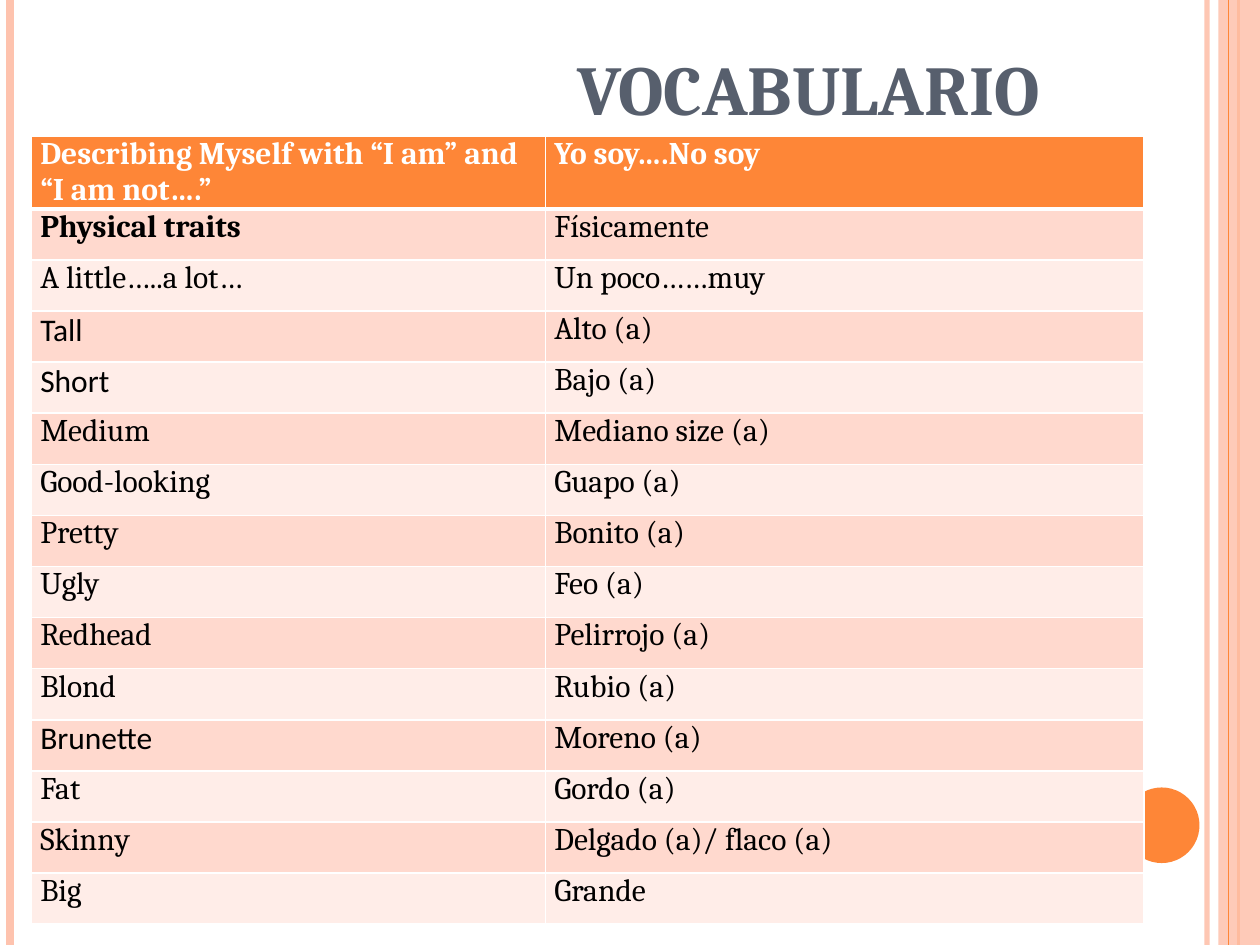
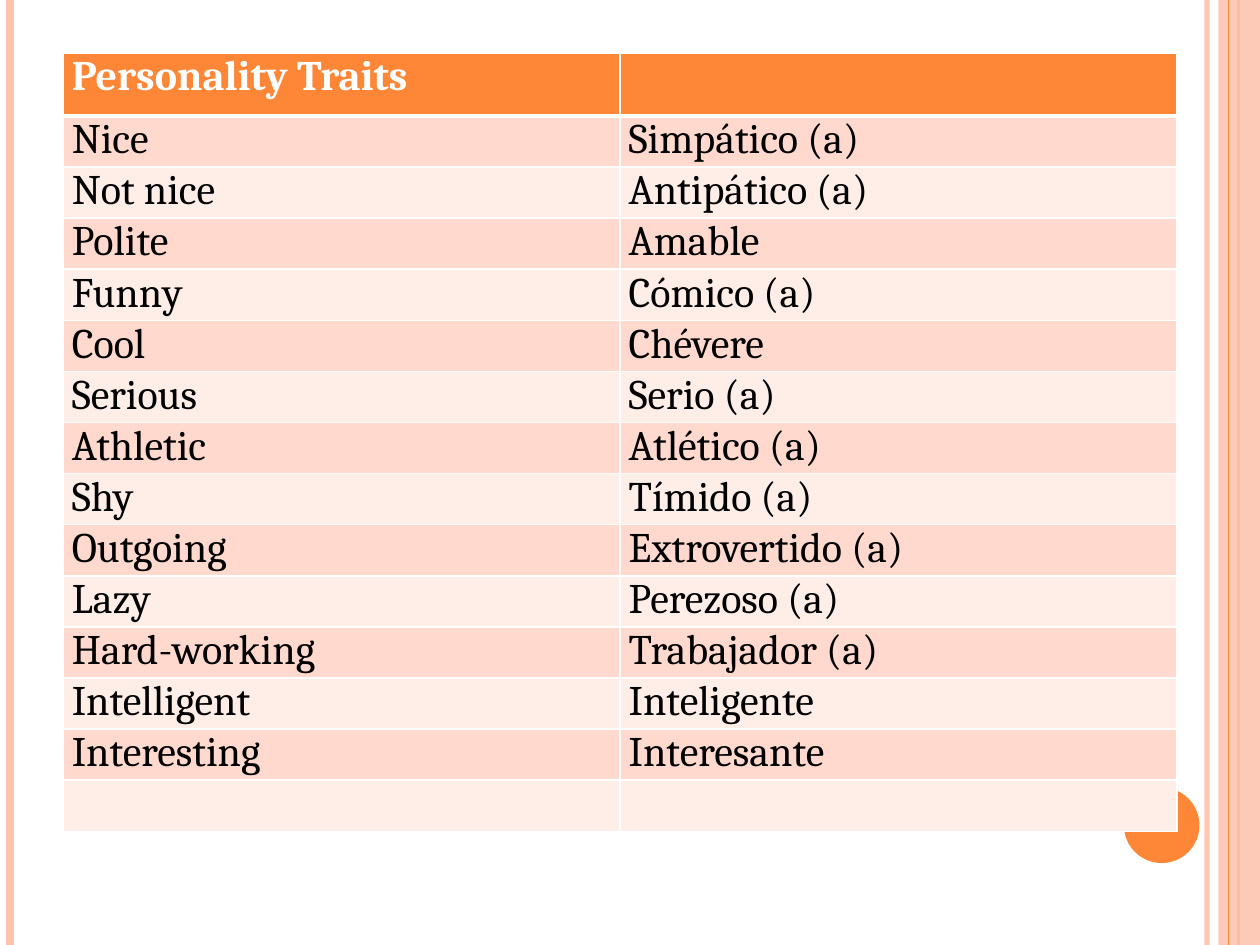
from lxml import etree
from pptx import Presentation
from pptx.dml.color import RGBColor
from pptx.enum.shapes import MSO_CONNECTOR, MSO_SHAPE
from pptx.enum.text import MSO_ANCHOR, PP_ALIGN
from pptx.oxml.ns import qn
from pptx.util import Inches, Pt

STRAIGHT = MSO_CONNECTOR.STRAIGHT
RECTANGLE, OVAL = MSO_SHAPE.RECTANGLE, MSO_SHAPE.OVAL
CENTER, LEFT = PP_ALIGN.CENTER, PP_ALIGN.LEFT
TOP, BOTTOM = MSO_ANCHOR.TOP, MSO_ANCHOR.BOTTOM

COLORS = {
    "orange": "FE8637", "peach": "FEC3AE", "slate": "575F6D",
    "band_dark": "FFD9CE", "band_light": "FFEDE8",
    "white": "FFFFFF", "black": "000000",
}
SERIF, SANS = "Cambria", "Calibri"
SLIDE_WIDTH, SLIDE_HEIGHT = 10, 7.5
BODY_HEIGHT = 5.68

TITLE = "VOCABULARIO"
PHYSICAL_TRAITS = [
    ("Describing Myself with “I am” and “I am not….”", "Yo soy….No soy"),
    ("Physical traits", "Físicamente"),
    ("A little…..a lot…", "Un poco……muy"),
    ("Tall", "Alto (a)"),
    ("Short", "Bajo (a)"),
    ("Medium", "Mediano size (a)"),
    ("Good-looking", "Guapo (a)"),
    ("Pretty", "Bonito (a)"),
    ("Ugly", "Feo (a)"),
    ("Redhead", "Pelirrojo (a)"),
    ("Blond", "Rubio (a)"),
    ("Brunette", "Moreno (a)"),
    ("Fat", "Gordo (a)"),
    ("Skinny", "Delgado (a)/ flaco (a)"),
    ("Big", "Grande"),
]
PERSONALITY_TRAITS = [
    ("Personality Traits", ""),
    ("Nice", "Simpático (a)"),
    ("Not nice", "Antipático (a)"),
    ("Polite", "Amable"),
    ("Funny", "Cómico (a)"),
    ("Cool", "Chévere"),
    ("Serious", "Serio (a)"),
    ("Athletic", "Atlético (a)"),
    ("Shy", "Tímido (a)"),
    ("Outgoing", "Extrovertido (a)"),
    ("Lazy", "Perezoso (a)"),
    ("Hard-working", "Trabajador (a)"),
    ("Intelligent", "Inteligente"),
    ("Interesting", "Interesante"),
    ("", ""),
]
SANS_WORDS = {"Tall", "Short", "Brunette"}
BOLD_WORDS = {"Physical traits"}


def rgb(name):
    return RGBColor.from_string(COLORS[name])


def write_text(frame, text, size=18, font=SERIF, color="black", bold=False, align=LEFT):
    paragraph = frame.paragraphs[0]
    paragraph.alignment = align
    run = paragraph.add_run()
    run.text = text
    run.font.name = font
    run.font.size = Pt(size)
    run.font.bold = bold
    run.font.color.rgb = rgb(color)
    return run


def set_opacity(shape, percent):
    color = next(shape.element.iter(qn("a:srgbClr")))
    etree.SubElement(color, qn("a:alpha"), val=str(percent * 1000))


def add_stripe(slide, x, color, width, opacity=100):
    stripe = slide.shapes.add_connector(
        STRAIGHT, Inches(x), 0, Inches(x), Inches(SLIDE_HEIGHT))
    stripe.line.color.rgb = rgb(color)
    stripe.line.width = Pt(width)
    etree.SubElement(stripe.element.spPr, qn("a:effectLst"))
    if opacity < 100:
        set_opacity(stripe, opacity)


def add_block(slide, kind, left, top, width, height, color):
    block = slide.shapes.add_shape(
        kind, Inches(left), Inches(top), Inches(width), Inches(height))
    block.shadow.inherit = False
    block.fill.solid()
    block.fill.fore_color.rgb = rgb(color)
    block.line.fill.background()
    return block


def add_decoration(slide):
    add_stripe(slide, 9.58, "peach", 3, opacity=93)
    add_stripe(slide, 0.08, "peach", 4.5)
    add_stripe(slide, 9.83, "orange", 1.5)
    band = add_block(slide, RECTANGLE, 9.67, 0, 0.33, SLIDE_HEIGHT, "peach")
    set_opacity(band, 87)
    add_stripe(slide, 9.75, "orange", 0.75)
    add_block(slide, OVAL, 8.92, 6.25, 0.6, 0.6, "orange")


def set_borders(cell, top, bottom):
    properties = cell._tc.get_or_add_tcPr()
    for side, width in (("L", 1), ("R", 1), ("T", top), ("B", bottom)):
        line = etree.SubElement(properties, qn(f"a:ln{side}"), w=str(Pt(width)))
        fill = etree.SubElement(line, qn("a:solidFill"))
        etree.SubElement(fill, qn("a:srgbClr"), val=COLORS["white"])


def format_cell(cell, text, row, size):
    is_header = row == 0
    set_borders(cell, top=3 if row == 1 else 1, bottom=3 if is_header else 1)
    cell.fill.solid()
    band = "band_dark" if row % 2 else "band_light"
    cell.fill.fore_color.rgb = rgb("orange" if is_header else band)
    cell.margin_left = cell.margin_right = Inches(0.07)
    cell.margin_top = cell.margin_bottom = 0
    cell.vertical_anchor = TOP
    if text:
        write_text(cell.text_frame, text, size=size,
                   font=SANS if text in SANS_WORDS else SERIF,
                   color="white" if is_header else "black",
                   bold=is_header or text in BOLD_WORDS)


def add_vocabulary(slide, entries, left, top, widths, header_height, size):
    table = slide.shapes.add_table(
        len(entries), len(widths), Inches(left), Inches(top),
        Inches(sum(widths)), Inches(header_height + BODY_HEIGHT)).table
    for column, width in zip(table.columns, widths):
        column.width = Inches(width)
    body_row_height = BODY_HEIGHT / (len(entries) - 1)
    for row, entry in enumerate(entries):
        table.rows[row].height = Inches(body_row_height if row else header_height)
        for column, text in enumerate(entry):
            format_cell(table.cell(row, column), text, row, size)


def format_title(title, text):
    title.left, title.top = Inches(0.5), Inches(0.3)
    title.width, title.height = Inches(8.17), Inches(0.78)
    frame = title.text_frame
    frame.vertical_anchor = BOTTOM
    frame.word_wrap = True
    frame.margin_left = Inches(3.76)
    write_text(frame, text, size=40, color="slate", bold=True, align=CENTER)


def main():
    presentation = Presentation()
    presentation.slide_width = Inches(SLIDE_WIDTH)
    presentation.slide_height = Inches(SLIDE_HEIGHT)
    title_only = presentation.slide_layouts.get_by_name("Title Only")
    blank = presentation.slide_layouts.get_by_name("Blank")

    physical = presentation.slides.add_slide(title_only)
    add_decoration(physical)
    format_title(physical.shapes.title, TITLE)
    add_vocabulary(physical, PHYSICAL_TRAITS, 0.25, 1.08, (4.08, 4.75),
                   header_height=0.41, size=18)

    personality = presentation.slides.add_slide(blank)
    add_decoration(personality)
    add_vocabulary(personality, PERSONALITY_TRAITS, 0.5, 0.42, (4.42, 4.42),
                   header_height=0.5, size=24)

    presentation.save("out.pptx")


if __name__ == "__main__":
    main()
